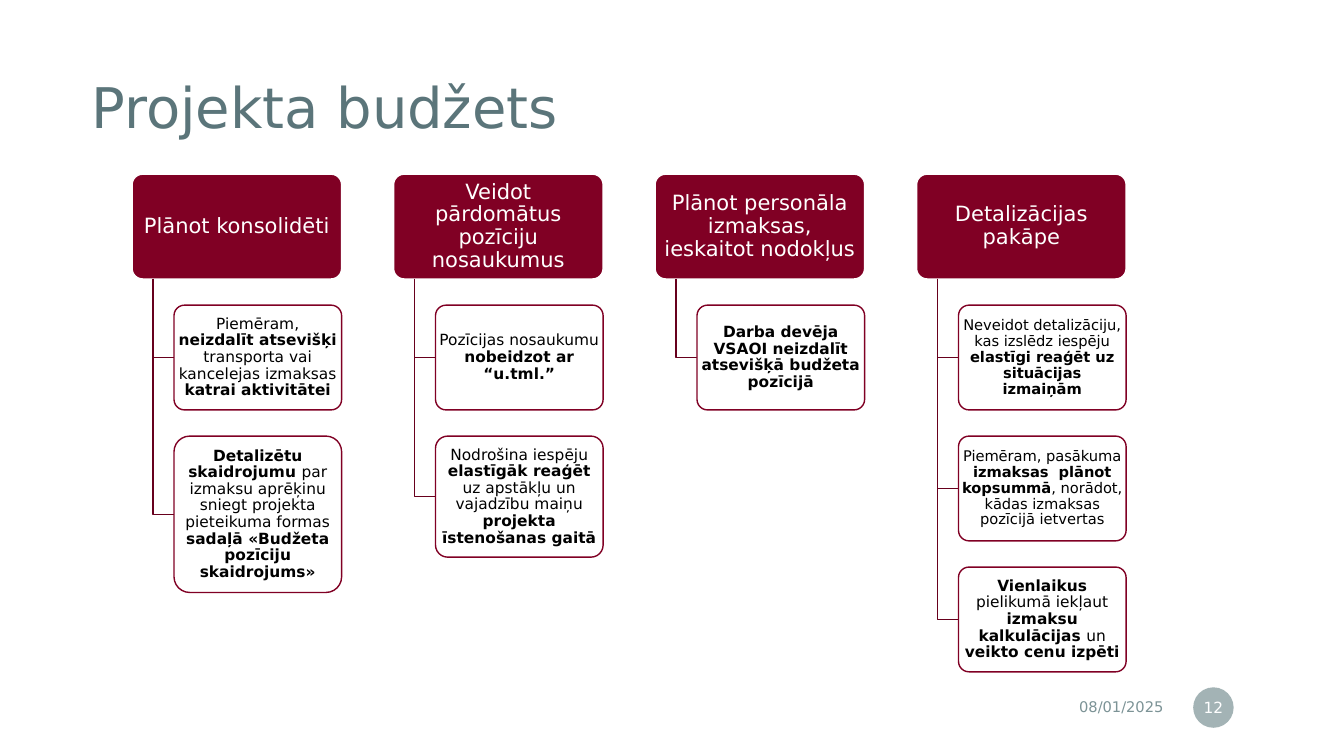
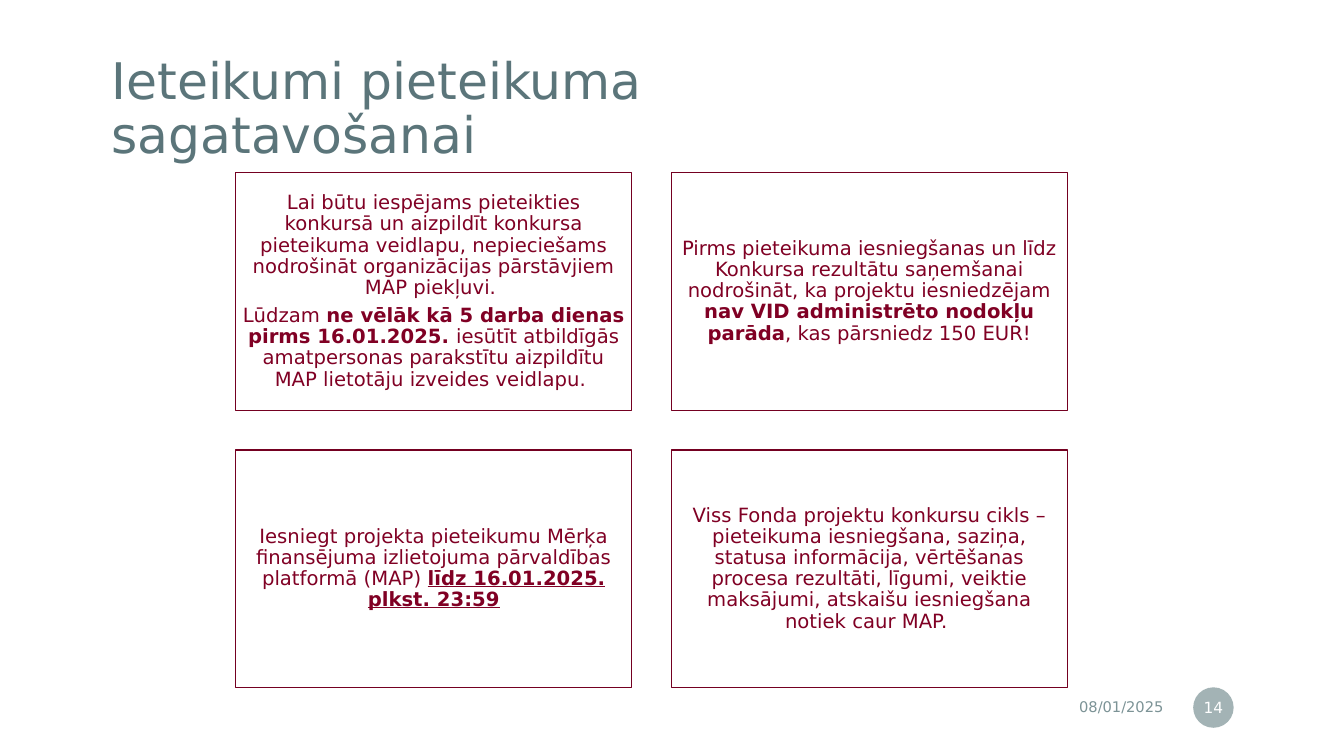
from dataclasses import dataclass

import pptx
import pptx.dml.color
import pptx.enum.shapes
import pptx.enum.text
import pptx.oxml
import pptx.oxml.ns
import pptx.util

Cm = pptx.util.Cm
Pt = pptx.util.Pt
SHAPE = pptx.enum.shapes.MSO_SHAPE
ALIGN = pptx.enum.text.PP_ALIGN

FONT = "DejaVu Sans"
COLORS = {
    "title": "5B757A",
    "footer": "7C9396",
    "wine": "800024",
    "branch": "67001D",
    "frame": "740021",
    "white": "FFFFFF",
    "black": "000000",
}


@dataclass(frozen=True)
class Card:
    text: str
    height: float = 2.64
    size: float = 11


@dataclass(frozen=True)
class Column:
    heading: str
    cards: tuple[Card, ...]


@dataclass(frozen=True)
class Tile:
    text: str
    underline: bool = False


COLUMNS = (
    Column("Plānot konsolidēti", (
        Card("Piemēram, *neizdalīt atsevišķi *transporta vai kancelejas izmaksas *katrai aktivitātei*"),
        Card("*Detalizētu skaidrojumu *par izmaksu aprēķinu sniegt projekta pieteikuma formas "
             "*sadaļā «Budžeta pozīciju skaidrojums»*", height=3.94),
    )),
    Column("Veidot pārdomātus pozīciju nosaukumus", (
        Card("Pozīcijas nosaukumu *nobeidzot ar “u.tml.”*"),
        Card("Nodrošina iespēju *elastīgāk reaģēt *uz apstākļu un vajadzību maiņu "
             "*projekta īstenošanas gaitā*", height=3.05),
    )),
    Column("Plānot personāla izmaksas, ieskaitot nodokļus", (
        Card("*Darba devēja VSAOI neizdalīt atsevišķā budžeta pozīcijā*"),
    )),
    Column("Detalizācijas pakāpe", (
        Card("Neveidot detalizāciju, kas izslēdz iespēju *elastīgi reaģēt uz situācijas izmaiņām*",
             size=10.5),
        Card("Piemēram, pasākuma *izmaksas  plānot kopsummā*, norādot, kādas izmaksas pozīcijā ietvertas",
             size=10.5),
        Card("*Vienlaikus* pielikumā iekļaut *izmaksu kalkulācijas *un *veikto cenu izpēti*"),
    )),
)

TILES = (
    Tile("Lai būtu iespējams pieteikties konkursā un aizpildīt konkursa pieteikuma veidlapu, "
         "nepieciešams nodrošināt organizācijas pārstāvjiem MAP piekļuvi. \n"
         "Lūdzam *ne vēlāk kā 5 darba dienas pirms 16.01.2025. *iesūtīt atbildīgās amatpersonas "
         "parakstītu aizpildītu MAP lietotāju izveides veidlapu. "),
    Tile("Pirms pieteikuma iesniegšanas un līdz Konkursa rezultātu saņemšanai nodrošināt, "
         "ka projektu iesniedzējam *nav VID administrēto nodokļu parāda*, kas pārsniedz 150 EUR!"),
    Tile("Iesniegt projekta pieteikumu Mērķa finansējuma izlietojuma pārvaldības platformā (MAP) "
         "*līdz 16.01.2025. plkst. 23:59*", underline=True),
    Tile("Viss Fonda projektu konkursu cikls – pieteikuma iesniegšana, saziņa, statusa informācija, "
         "vērtēšanas procesa rezultāti, līgumi, veiktie maksājumi, atskaišu iesniegšana notiek caur MAP. "),
)


def rgb(name: str) -> pptx.dml.color.RGBColor:
    return pptx.dml.color.RGBColor.from_string(COLORS[name])


def write(sp, text: str, *, size: float, color: str, align=ALIGN.CENTER,
          line_spacing: float = 0.9, after: float = 0, underline: bool = False,
          insets: tuple[float, float] = (0, 0)) -> None:
    tf = sp.text_frame
    tf.word_wrap = True
    tf.vertical_anchor = pptx.enum.text.MSO_ANCHOR.MIDDLE
    tf.margin_left = tf.margin_right = Cm(insets[0])
    tf.margin_top = tf.margin_bottom = Cm(insets[1])
    for i, line in enumerate(text.split("\n")):
        p = tf.add_paragraph() if i else tf.paragraphs[0]
        p.alignment = align
        p.line_spacing = line_spacing
        p.space_after = Pt(size * after)
        for j, part in enumerate(line.split("*")):
            if not part:
                continue
            r = p.add_run()
            r.text = part
            r.font.name = FONT
            r.font.size = Pt(size)
            r.font.color.rgb = rgb(color)
            r.font.bold = j % 2 == 1
            if underline and r.font.bold:
                r.font.underline = True


def add_box(slide, kind, x: float, y: float, w: float, h: float,
            fill: str, line: str | None = None):
    sp = slide.shapes.add_shape(kind, Cm(x), Cm(y), Cm(w), Cm(h))
    sp.shadow.inherit = False
    sp.fill.solid()
    sp.fill.fore_color.rgb = rgb(fill)
    if line:
        sp.line.color.rgb = rgb(line)
        sp.line.width = Pt(1)
    else:
        sp.line.fill.background()
    if kind == SHAPE.ROUNDED_RECTANGLE:
        sp.adjustments[0] = 0.1
    return sp


def add_branch(slide, x: float, top: float, bottom: float, right: float) -> None:
    builder = slide.shapes.build_freeform(Cm(x), Cm(top))
    builder.add_line_segments([(Cm(x), Cm(bottom)), (Cm(right), Cm(bottom))], close=False)
    sp = builder.convert_to_shape()
    sp.shadow.inherit = False
    sp.fill.background()
    sp.line.color.rgb = rgb("branch")
    sp.line.width = Pt(1)


def add_page(prs, title: str, number: int, title_size: float, title_inset: float):
    slide = prs.slides.add_slide(prs.slide_layouts[6])
    sp = slide.shapes.add_textbox(Cm(2.31), Cm(1.22), Cm(22.17), Cm(3.12))
    write(sp, title, size=title_size, color="title", align=ALIGN.LEFT, insets=(title_inset, 0.5))
    sp = slide.shapes.add_textbox(Cm(21.92), Cm(17.37), Cm(7.65), Cm(0.89))
    write(sp, "08/01/2025", size=10.5, color="footer", align=ALIGN.RIGHT,
          line_spacing=1, insets=(0.25, 0.13))
    sp = add_box(slide, SHAPE.OVAL, 30.07, 17.32, 1.02, 1.02, "footer")
    color = sp.fill._xPr.find(".//" + pptx.oxml.ns.qn("a:srgbClr"))
    color.append(pptx.oxml.parse_xml(
        f'<a:alpha {pptx.oxml.ns.nsdecls("a")} val="70000"/>'))
    write(sp, str(number), size=11, color="white", line_spacing=1, insets=(0.05, 0.13))
    return slide


def add_columns(slide, columns: tuple[Column, ...]) -> None:
    left, top, width, height, step = 3.33, 4.39, 5.28, 2.64, 6.59
    gap, indent = height / 4, width / 10
    for i, column in enumerate(columns):
        x = left + i * step
        sp = add_box(slide, SHAPE.ROUNDED_RECTANGLE, x, top, width, height, "wine", "white")
        write(sp, column.heading, size=15, color="white", after=0.35, insets=(0.08, 0.05))
        card_x, y = x + 2 * indent, top + height + gap
        for card in column.cards:
            add_branch(slide, x + indent, top + height, y + card.height / 2, card_x)
            sp = add_box(slide, SHAPE.ROUNDED_RECTANGLE, card_x, y, width * 0.8, card.height,
                         "white", "wine")
            write(sp, card.text, size=card.size, color="black", after=0.35)
            y += card.height + gap


def add_tiles(slide, tiles: tuple[Tile, ...]) -> None:
    left, top, width, height, gap = 5.94, 4.35, 9.98, 5.99, 1
    for i, tile in enumerate(tiles):
        row, col = divmod(i, 2)
        sp = add_box(slide, SHAPE.RECTANGLE, left + col * (width + gap), top + row * (height + gap),
                     width, height, "white", "frame")
        write(sp, tile.text, size=14, color="wine", after=0.35, underline=tile.underline,
              insets=(0.15, 0.15))


def main() -> None:
    prs = pptx.Presentation()
    prs.slide_width, prs.slide_height = Cm(33.87), Cm(19.05)
    add_columns(add_page(prs, "Projekta budžets", 12, 40, 0), COLUMNS)
    add_tiles(add_page(prs, "Ieteikumi pieteikuma sagatavošanai", 14, 36, 0.5), TILES)
    prs.save("out.pptx")


if __name__ == "__main__":
    main()
